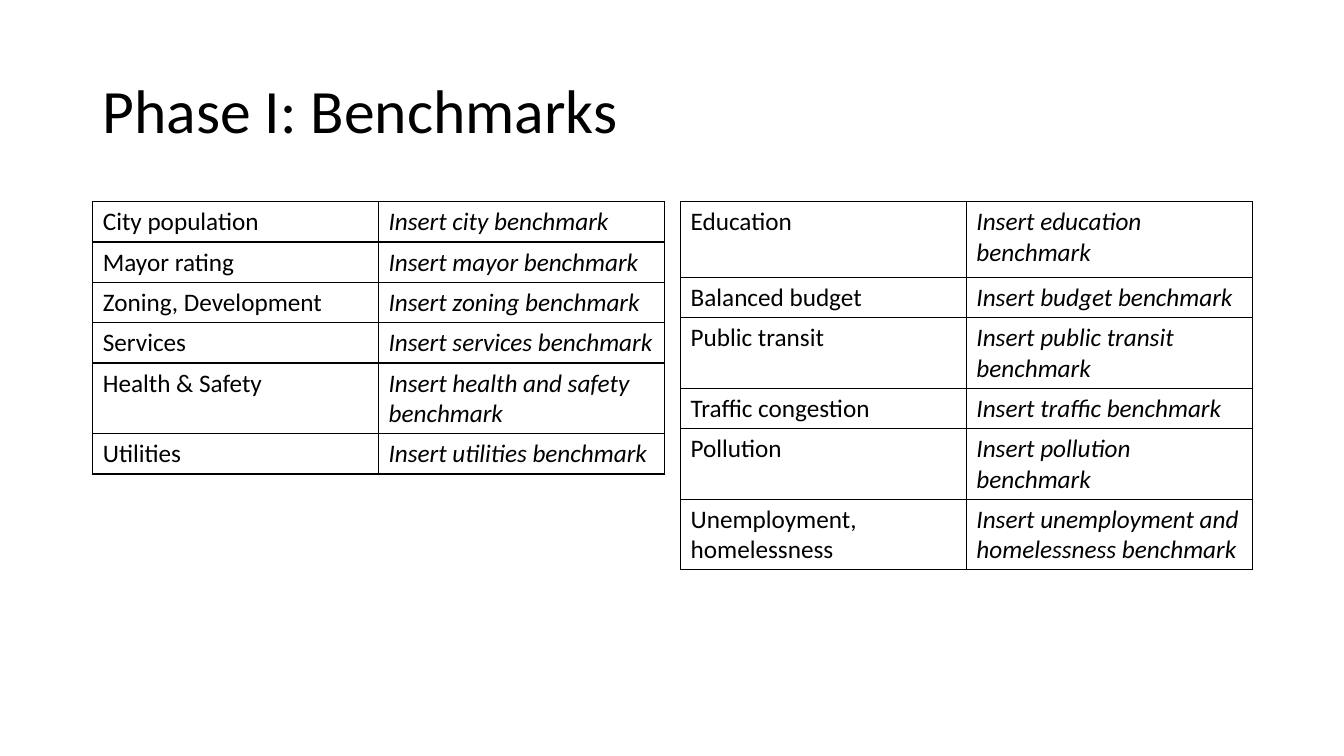
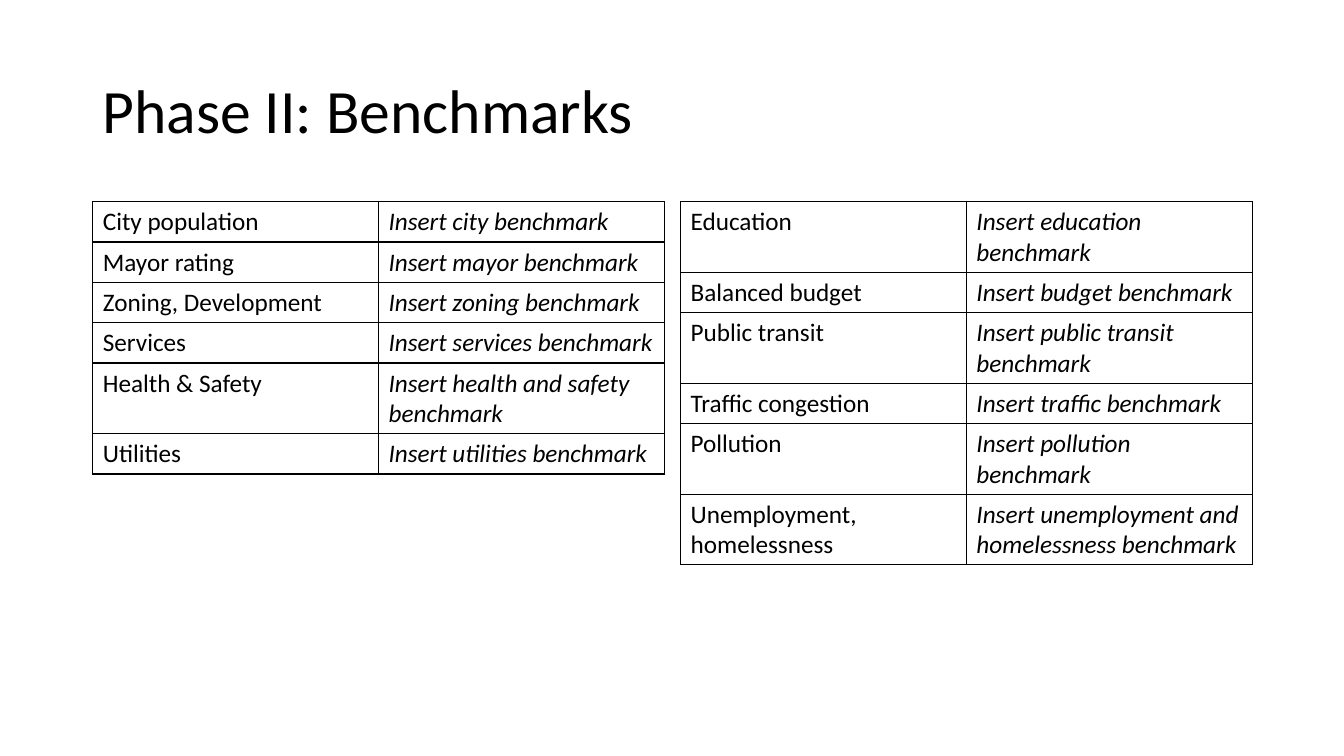
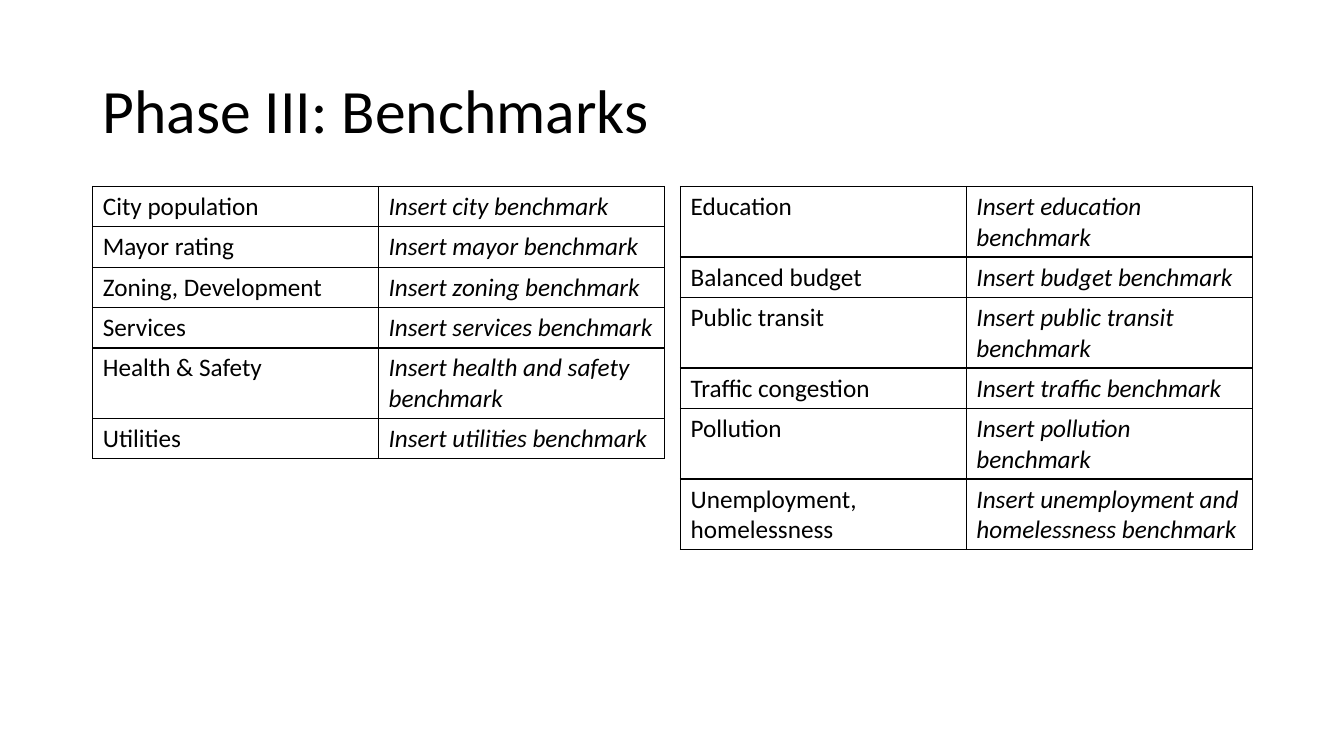
from lxml import etree
from pptx import Presentation
from pptx.dml.color import RGBColor
from pptx.enum.text import MSO_ANCHOR
from pptx.oxml.ns import qn
from pptx.util import Inches, Pt

MIDDLE = MSO_ANCHOR.MIDDLE
BLANK_LAYOUT = 6
SLIDE_WIDTH, SLIDE_HEIGHT = 13.33, 7.5
EDGES = ("a:lnL", "a:lnR", "a:lnT", "a:lnB")

FIRST_TOPICS = [
    ("City population", "Insert city benchmark"),
    ("Mayor rating", "Insert mayor benchmark"),
    ("Zoning, Development", "Insert zoning benchmark"),
    ("Services", "Insert services benchmark"),
    ("Health & Safety", "Insert health and safety benchmark"),
    ("Utilities", "Insert utilities benchmark"),
]
SECOND_TOPICS = [
    ("Education", "Insert education benchmark"),
    ("Balanced budget", "Insert budget benchmark"),
    ("Public transit", "Insert public transit benchmark"),
    ("Traffic congestion", "Insert traffic benchmark"),
    ("Pollution", "Insert pollution benchmark"),
    ("Unemployment, homelessness", "Insert unemployment and homelessness benchmark"),
]
PHASES = [
    ("Phase I: Benchmarks", 2, 0.75),
    ("Phase II: Benchmarks", 2, 0.4),
    ("Phase III: Benchmarks", 1.85, 0.4),
]


def color(hex_code):
    return RGBColor.from_string(hex_code)


def write_text(frame, text, size, font, ink, italic=False, spacing=1.0):
    paragraph = frame.paragraphs[0]
    paragraph.line_spacing = spacing
    run = paragraph.add_run()
    run.text = text
    run.font.size = Pt(size)
    run.font.name = font
    run.font.italic = italic
    run.font.color.rgb = color(ink)


class Deck:
    font = "Calibri"
    ink = "000000"
    paper = "FFFFFF"
    title_size = 44
    body_size = 18
    border_width = 1
    margin = 0.92
    content_width = 11.5
    table_gap = 0.16
    column_width = (content_width - table_gap) / 4
    row_height = 0.4

    def __init__(self):
        self.presentation = Presentation()
        self.presentation.slide_width = Inches(SLIDE_WIDTH)
        self.presentation.slide_height = Inches(SLIDE_HEIGHT)
        self.slide = None

    def add_slide(self):
        layout = self.presentation.slide_layouts[BLANK_LAYOUT]
        self.slide = self.presentation.slides.add_slide(layout)
        fill = self.slide.background.fill
        fill.solid()
        fill.fore_color.rgb = color(self.paper)

    def title(self, text):
        shape = self.slide.shapes.add_textbox(
            Inches(self.margin), Inches(0.4), Inches(self.content_width), Inches(1.45))
        frame = shape.text_frame
        frame.word_wrap = True
        frame.vertical_anchor = MIDDLE
        write_text(frame, text, size=self.title_size, font=self.font,
                   ink=self.ink, spacing=0.9)

    def table(self, rows, position, top, first_height):
        width = 2 * self.column_width
        left = self.margin + position * (width + self.table_gap)
        heights = [first_height] + [self.row_height] * (len(rows) - 1)
        table = self.slide.shapes.add_table(
            len(rows), 2, Inches(left), Inches(top),
            Inches(width), Inches(sum(heights))).table
        table.first_row = False
        table.horz_banding = False
        for column in table.columns:
            column.width = Inches(self.column_width)
        for row, height, texts in zip(table.rows, heights, rows):
            row.height = Inches(height)
            for index, (cell, text) in enumerate(zip(row.cells, texts)):
                cell.fill.background()
                self.border(cell)
                write_text(cell.text_frame, text, size=self.body_size,
                           font=self.font, ink=self.ink, italic=index == 1)

    def border(self, cell):
        properties = cell._tc.get_or_add_tcPr()
        for index, edge in enumerate(EDGES):
            line = etree.Element(qn(edge), w=str(Pt(self.border_width)))
            fill = etree.SubElement(line, qn("a:solidFill"))
            etree.SubElement(fill, qn("a:srgbClr"), val=self.ink)
            properties.insert(index, line)


def main():
    deck = Deck()
    for title, top, education_height in PHASES:
        deck.add_slide()
        deck.title(title)
        deck.table(FIRST_TOPICS, 0, top, deck.row_height)
        deck.table(SECOND_TOPICS, 1, top, education_height)
    deck.presentation.save("out.pptx")


if __name__ == "__main__":
    main()
